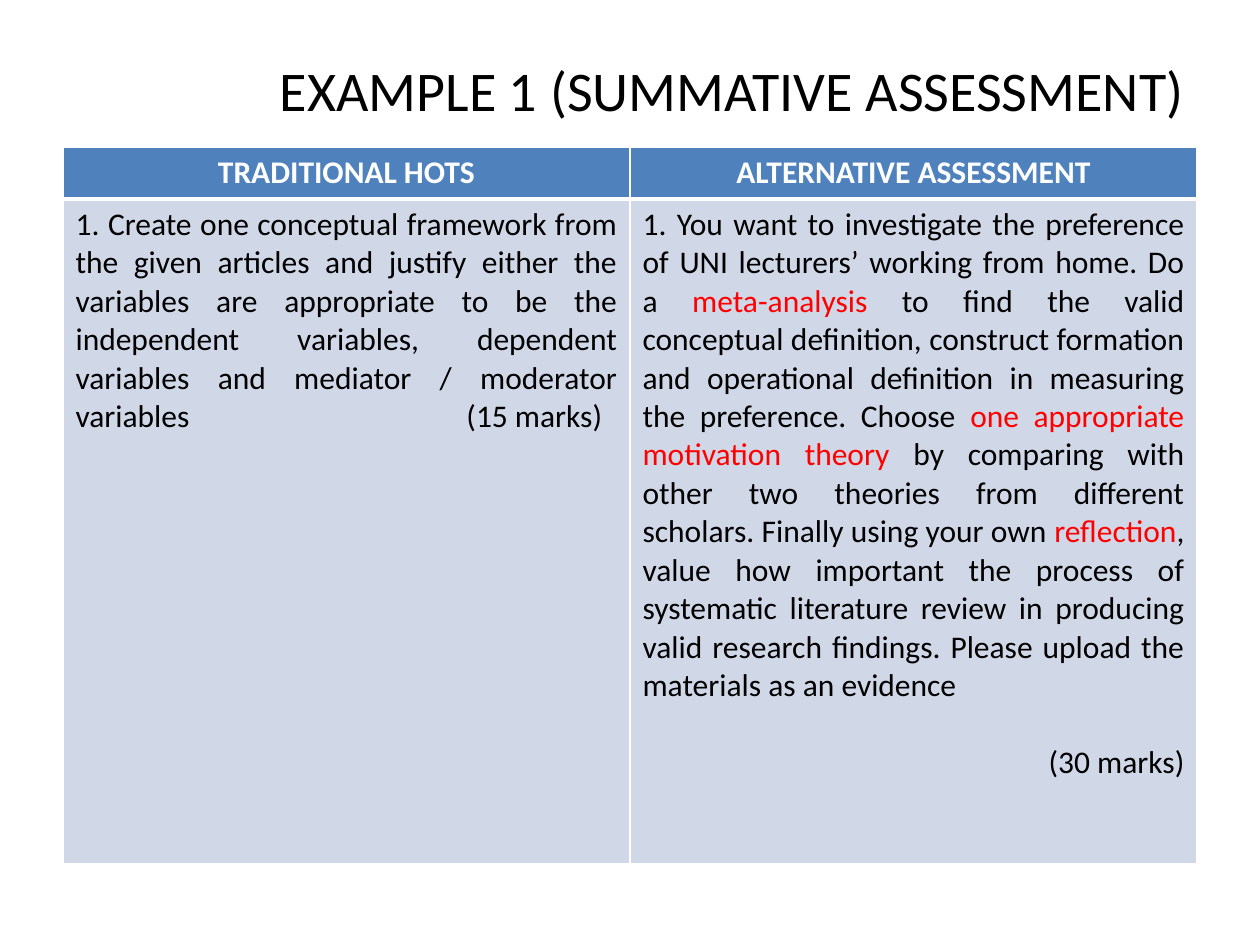
from lxml.etree import SubElement
from pptx import Presentation
from pptx.dml.color import RGBColor
from pptx.enum.text import MSO_ANCHOR as Anchor, PP_ALIGN as Align
from pptx.oxml.ns import qn
from pptx.util import Cm, Pt

COLORS = {
    "text": "000000",
    "accent": "FF0000",
    "header": "4F81BD",
    "body": "D0D8E8",
    "white": "FFFFFF",
}
FONT = "Calibri"
TITLE = "EXAMPLE 1 (SUMMATIVE ASSESSMENT)"
HEADERS = ["TRADITIONAL HOTS", "ALTERNATIVE ASSESSMENT"]
TRADITIONAL = [
    ("1. Create one conceptual framework from the given articles and justify "
     "either the variables are appropriate to be the independent variables, "
     "dependent variables and mediator / moderator variables\t(15 marks)", "text"),
]
ALTERNATIVE = [
    ("1. You want to investigate the preference of UNI lecturers’ working from home. Do a ", "text"),
    ("meta-analysis", "accent"),
    (" to find the valid conceptual definition, construct formation and operational "
     "definition in measuring the preference. Choose ", "text"),
    ("one appropriate motivation theory ", "accent"),
    ("by comparing with other two theories from different scholars. "
     "Finally using your own ", "text"),
    ("reflection", "accent"),
    (", value how important the process of systematic literature review in producing "
     "valid research findings. Please upload the materials as an evidence", "text"),
]
MARKS = [("(30 marks)", "text")]


def rgb(name):
    return RGBColor.from_string(COLORS[name])


def write(para, spans, align, size=18, bold=False):
    para.alignment = align
    for text, color in spans:
        span = para.add_run()
        span.text = text
        span.font.name = FONT
        span.font.size = Pt(size)
        span.font.bold = bold
        span.font.color.rgb = rgb(color)


def add_tab_stop(para, position):
    tabs = SubElement(para._p.get_or_add_pPr(), qn("a:tabLst"))
    SubElement(tabs, qn("a:tab"), pos=str(position), algn="l")


def style_cell(cell, fill, top, bottom):
    properties = cell._tc.get_or_add_tcPr()
    for side, width in (("L", 1), ("R", 1), ("T", top), ("B", bottom)):
        line = SubElement(properties, qn(f"a:ln{side}"), w=str(Pt(width)))
        paint = SubElement(line, qn("a:solidFill"))
        SubElement(paint, qn("a:srgbClr"), val=COLORS["white"])
    cell.fill.solid()
    cell.fill.fore_color.rgb = rgb(fill)


def add_title(page, left, top, width, height):
    box = page.shapes.add_textbox(left, top, width, height)
    frame = box.text_frame
    frame.word_wrap = True
    frame.vertical_anchor = Anchor.MIDDLE
    write(frame.paragraphs[0], [(TITLE, "text")], Align.RIGHT, size=32)


def add_comparison(page, left, top, width, height):
    table = page.shapes.add_table(2, 2, left, top, width, height).table
    header_height = Cm(1.04)
    table.rows[0].height = header_height
    table.rows[1].height = height - header_height

    for column, (header, body) in enumerate(zip(HEADERS, (TRADITIONAL, ALTERNATIVE))):
        head_cell, body_cell = table.cell(0, column), table.cell(1, column)
        style_cell(head_cell, "header", 1, 3)
        style_cell(body_cell, "body", 3, 1)
        write(head_cell.text_frame.paragraphs[0], [(header, "white")], Align.CENTER, bold=True)
        write(body_cell.text_frame.paragraphs[0], body, Align.JUSTIFY)

    add_tab_stop(table.cell(1, 0).text_frame.paragraphs[0], Cm(7.88))
    marks = table.cell(1, 1).text_frame.add_paragraph()
    marks.space_before = Pt(22)
    write(marks, MARKS, Align.RIGHT)


def main():
    deck = Presentation()
    deck.slide_width, deck.slide_height = Cm(25.4), Cm(19.05)
    page = deck.slides.add_slide(deck.slide_layouts[6])
    add_title(page, Cm(1.47), Cm(0.2), Cm(22.66), Cm(3.18))
    add_comparison(page, Cm(1.27), Cm(2.97), Cm(22.86), Cm(14.44))
    deck.save("out.pptx")


if __name__ == "__main__":
    main()
